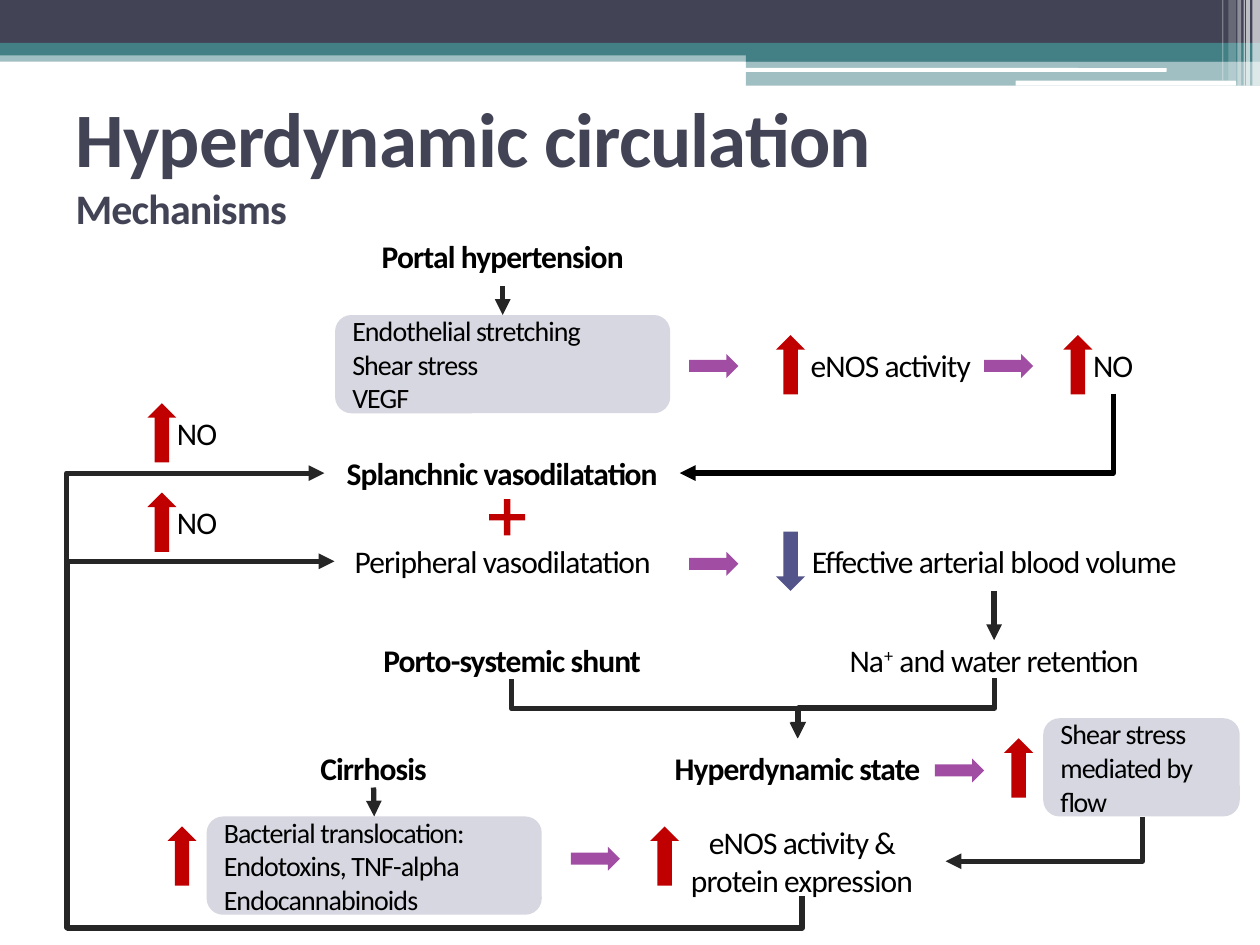
from pptx import Presentation
from pptx.dml.color import RGBColor
from pptx.enum.shapes import MSO_CONNECTOR as Link, MSO_SHAPE as Geo
from pptx.enum.text import MSO_ANCHOR as Anchor, PP_ALIGN as Align
from pptx.oxml.ns import qn
from pptx.oxml.xmlchemy import OxmlElement as Node
from pptx.util import Inches, Pt

NAVY, TEAL, WHITE, BLACK = "424456", "438086", "FFFFFF", "000000"
INK, RED, BLUE, PURPLE, GREY = "262626", "C00000", "53548A", "A04DA3", "D6D7E0"
ROW = 0.47   # height of one text row and of the upright arrows


def color(hex):
    return RGBColor.from_string(hex)


def shape(slide, geo, box, fill=None, alpha=100, adj=None):
    item = slide.shapes.add_shape(geo, *[Inches(v) for v in box])
    item.shadow.inherit = False
    item.line.fill.background()
    if adj is not None:
        item.adjustments[0] = adj
    if fill is None:
        item.fill.background()
        return item
    item.fill.solid()
    item.fill.fore_color.rgb = color(fill)
    if alpha < 100:
        node = Node("a:alpha")
        node.set("val", str(alpha * 1000))
        item._element.spPr.find(".//" + qn("a:srgbClr")).append(node)
    return item


def write(para, text, size, tint=BLACK, bold=False, base=0):
    run = para.add_run()
    run.text = text
    look = {"name": "Calibri", "size": Pt(size), "bold": bold}
    for key, value in look.items():
        setattr(run.font, key, value)
    run.font.color.rgb = color(tint)
    props = run._r.get_or_add_rPr()
    props.set("spc", "-50")
    if base:
        props.set("baseline", str(base * 1000))


def label(slide, box, *parts, bold=False):
    """Centred line; each part is a string or a (string, baseline) pair."""
    item = shape(slide, Geo.ROUNDED_RECTANGLE, box)
    para = item.text_frame.paragraphs[0]
    para.alignment = Align.CENTER
    for part in parts:
        text, base = part if isinstance(part, tuple) else (part, 0)
        write(para, text, 18, bold=bold, base=base)
    return item


def panel(slide, box, *lines):
    item = shape(slide, Geo.ROUNDED_RECTANGLE, box, GREY)
    frame = item.text_frame
    for i, text in enumerate(lines):
        para = frame.add_paragraph() if i else frame.paragraphs[0]
        para.alignment = Align.LEFT
        write(para, text, 16)
    return item


def right(slide, x, y):
    shape(slide, Geo.RIGHT_ARROW, (x, y, 0.39, 0.19), PURPLE)


def rise(slide, x, y):
    shape(slide, Geo.UP_ARROW, (x, y, 0.23, ROW), RED)


def style(line, tint):
    line.line.width = Pt(3)
    line.line.color.rgb = color(tint)
    tail = Node("a:tailEnd")
    tail.set("type", "triangle")
    line.line._get_or_add_ln().append(tail)
    line._element.spPr.append(Node("a:effectLst"))


def drop(slide, top, low):
    """Straight arrow from the bottom of one box to the top of the next."""
    line = slide.shapes.add_connector(Link.STRAIGHT, 0, 0, 0, 0)
    line.begin_connect(top, 2)
    line.end_connect(low, 0)
    style(line, INK)


def elbow(slide, box, bends, turn=90, flip=False, adj=(), tint=INK):
    """Bent arrow: box is its frame before the turn in degrees."""
    x, y, w, h = box
    ends = (x + w, y, x, y + h) if flip else (x, y, x + w, y + h)
    line = slide.shapes.add_connector(Link.ELBOW, *[Inches(v) for v in ends])
    props = line._element.spPr
    props.find(qn("a:xfrm")).set("rot", str(turn * 60000))
    geom = props.find(qn("a:prstGeom"))
    geom.set("prst", f"bentConnector{bends}")
    guides = geom.find(qn("a:avLst"))
    for i, value in enumerate(adj, 1):
        guide = Node("a:gd")
        guide.set("name", f"adj{i}")
        guide.set("fmla", f"val {round(value * 100000)}")
        guides.append(guide)
    style(line, tint)


def banner(slide, x, y, w):
    # Full-width bands, then the stepped bands on the right
    mid, end = x + 5.92, x + w
    for left, top, high, fill, alpha in (
            (x, 0.4, 0.09, TEAL, 50), (x, 0, 0.34, NAVY, 100),
            (x, 0.34, 0.1, TEAL, 100), (mid, 0.39, 0.1, TEAL, 100),
            (mid, 0.48, 0.2, TEAL, 50)):
        shape(slide, Geo.RECTANGLE, (left, y + top, end - left, high), fill, alpha)
    # White strips
    for left, top, wide, high in ((5.91, 0.54, 3.35, 0.03), (8.06, 0.64, 1.75, 0.04)):
        shape(slide, Geo.ROUNDED_RECTANGLE, (x + left, y + top, wide, high), WHITE)
    # Pale upright stripes, measured from the right edge
    for back, wide, high, alpha in (
            (0.06, 0.06, 0.68, 65), (0.11, 0.03, 0.68, 65), (0.13, 0.01, 0.68, 60),
            (0.18, 0.03, 0.68, 40), (0.25, 0.06, 0.64, 20), (0.3, 0.01, 0.64, 30)):
        shape(slide, Geo.RECTANGLE, (end - back, y, wide, high), WHITE, alpha)


def heading(slide, x, y, w, h):
    title = slide.shapes.title
    place = {"left": x, "top": y, "width": w, "height": h}
    for key, value in place.items():
        setattr(title, key, Inches(value))
    frame = title.text_frame
    frame.word_wrap = True
    frame.vertical_anchor = Anchor.MIDDLE
    para = frame.paragraphs[0]
    para.alignment = Align.LEFT
    write(para, "Hyperdynamic circulation", 44, NAVY, True)
    para.add_line_break()
    write(para, "Mechanisms", 24, NAVY, True)


def portal(slide, x, y, w):
    top = label(slide, (x, y, w, ROW), "Portal hypertension", bold=True)
    low = panel(slide, (x, y + 0.7, w, 0.78),
                "Endothelial stretching", "Shear stress", "VEGF")
    drop(slide, top, low)
    # Chain to the right of the panel
    for step in (2.81, 5.15):
        right(slide, x + step, y + 1.01)
    for step, wide, text in ((3.59, 1.64, "eNOS activity"), (5.86, 0.63, "NO")):
        label(slide, (x + step, y + 0.86, wide, ROW), text)
    for step in (3.5, 5.78):
        rise(slide, x + step, y + 0.86)
    elbow(slide, (x + 4.14, y - 0.08, 0.63, 3.44), 2, tint=BLACK)


def vessels(slide, x, y, w):
    label(slide, (x - 0.08, y, w + 0.15, ROW), "Splanchnic vasodilatation", bold=True)
    label(slide, (x, y + 0.7, w, ROW), "Peripheral vasodilatation")
    shape(slide, Geo.MATH_PLUS, (x + 1.17, y + 0.39, 0.39, 0.39), RED, adj=0.13)
    # Blood volume and retention
    right(slide, x + 2.81, y + 0.86)
    shape(slide, Geo.DOWN_ARROW, (x + 3.5, y + 0.7, 0.23, ROW), BLUE)
    top = label(slide, (x + 3.59, y + 0.7, 3.28, ROW), "Effective arterial blood volume")
    low = label(slide, (x + 3.59, y + 1.56, 3.28, 0.31),
                "Na", ("+", 30), " and water retention")
    drop(slide, top, low)
    # Nitric oxide over each incoming arrow
    for step in (-0.32, 0.39):
        label(slide, (x - 1.41, y + step, 0.63, ROW), "NO")
        rise(slide, x - 1.49, y + step)


def state(slide, x, y):
    label(slide, (x, y, 2.66, ROW), "Hyperdynamic state", bold=True)
    label(slide, (x - 2.42, y - 0.78, 2.97, 0.31), "Porto-systemic shunt", bold=True)
    # Shunt and retention meet above the state
    elbow(slide, (x + 1.88, y - 1.02, ROW, 1.56), 3, adj=(0.5,))
    elbow(slide, (x - 0.04, y - 1.37, ROW, 2.27), 3, 270, True, (0.5,))
    # Shear stress, then back to expression
    right(slide, x + 2.42, y + 0.16)
    rise(slide, x + 2.97, y)
    panel(slide, (x + 3.28, y - 0.16, 1.56, 0.78), "Shear stress", "mediated by flow")
    elbow(slide, (x + 3.11, y + 0.02, 0.35, 1.56), 2)
    label(slide, (x + 0.23, y + 0.7, 2.27, 0.55), "eNOS activity & protein expression")
    rise(slide, x + 0.16, y + 0.7)


def liver(slide, x, y):
    top = label(slide, (x - 0.16, y, 2.97, 0.31), "Cirrhosis", bold=True)
    low = panel(slide, (x, y + 0.54, 2.66, 0.78), "Bacterial translocation:",
                "Endotoxins, TNF-alpha", "Endocannabinoids")
    drop(slide, top, low)
    rise(slide, x - 0.31, y + 0.62)
    right(slide, x + 2.89, y + 0.78)
    # Feedback from expression to both kinds of vasodilatation
    elbow(slide, (x + 1.15, y - 2.4, 3.36, 3.79), 4, 90, True, (-0.074, 1.54))
    elbow(slide, (x + 1.54, y - 2.01, 2.66, 3.71), 4, 90, True, (-0.094, 1.572))


def main():
    deck = Presentation()
    deck.slide_width, deck.slide_height = Inches(10), Inches(7.5)
    slide = deck.slides.add_slide(deck.slide_layouts[5])
    banner(slide, 0, 0, 10)
    heading(slide, 0.5, 0.7, 9, 1.17)
    portal(slide, 2.66, 1.8, 2.66)
    vessels(slide, 2.66, 3.52, 2.66)
    state(slide, 5, 5.86)
    liver(slide, 1.64, 5.94)
    deck.save("out.pptx")


if __name__ == "__main__":
    main()
